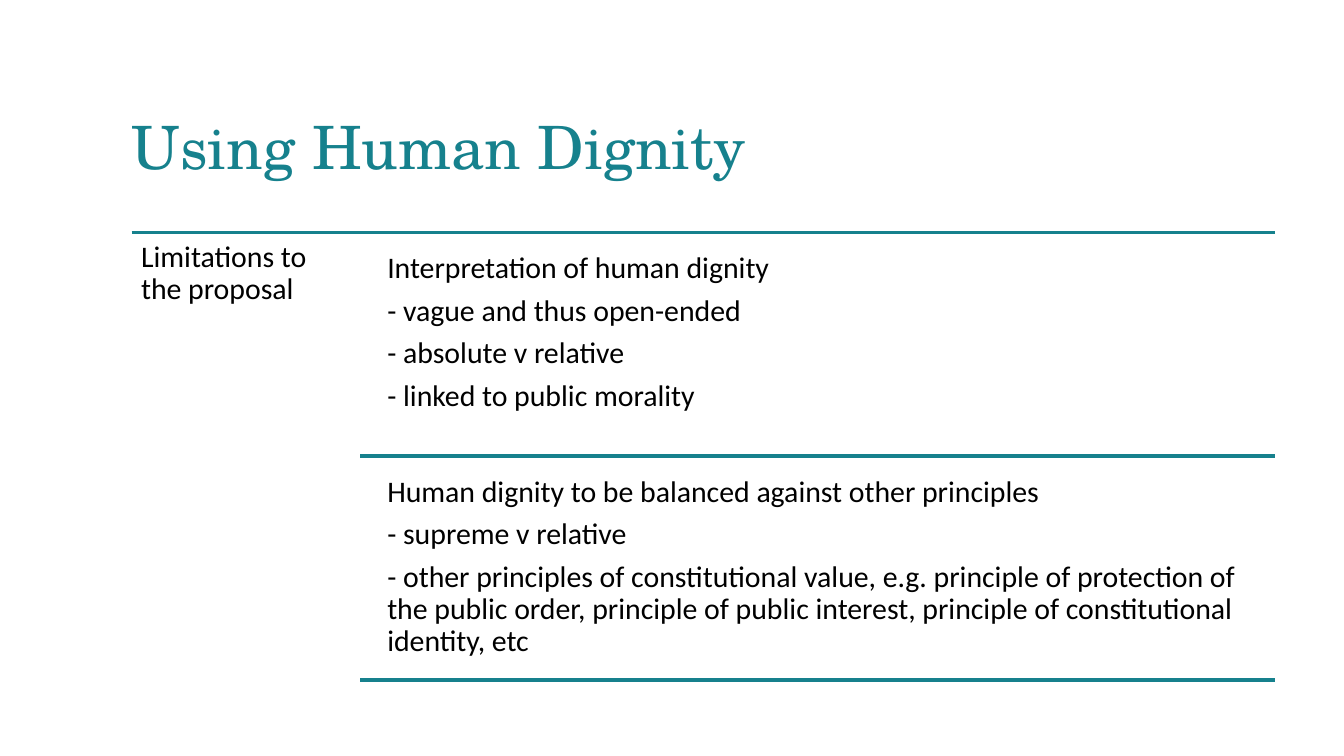
from lxml import etree
from pptx import Presentation
from pptx.dml.color import RGBColor
from pptx.enum.shapes import MSO_CONNECTOR
from pptx.enum.text import MSO_ANCHOR
from pptx.oxml.ns import qn
from pptx.util import Inches, Pt

LINE = MSO_CONNECTOR.STRAIGHT
TOP = MSO_ANCHOR.TOP
TEAL = RGBColor(0x16, 0x81, 0x8D)
BLACK = RGBColor(0, 0, 0)

# Grid: five columns, the first for the label; two rows
LEFT, RIGHT = 0.98, 9.49
HEAD, FOOT = 1.73, 5.06
COL, ROW = (RIGHT - LEFT) / 5, (FOOT - HEAD) / 2
SPLIT = LEFT + COL
PAD, GAP, INSET = 0.13, 0.08, 0.07

# Slide in 16:9
deck = Presentation()
deck.slide_width = Inches(10)
deck.slide_height = Inches(10 * 9 / 16)
slide = deck.slides.add_slide(deck.slide_layouts[6])


def add_text(box, inset, lines, font, size, color, pitch, after):
    shape = slide.shapes.add_textbox(*[Inches(n) for n in box])
    frame = shape.text_frame
    frame.word_wrap = True
    frame.vertical_anchor = TOP
    frame.margin_left = frame.margin_right = Inches(inset)
    frame.margin_top = frame.margin_bottom = Inches(inset)
    for i, line in enumerate(lines):
        para = frame.paragraphs[0] if i == 0 else frame.add_paragraph()
        para.line_spacing = pitch
        para.space_after = Pt(after)
        run = para.add_run()
        run.text = line
        run.font.name = font
        run.font.size = Pt(size)
        run.font.color.rgb = color


def add_rule(start, y):
    rule = slide.shapes.add_connector(
        LINE, Inches(start), Inches(y), Inches(RIGHT), Inches(y))
    rule.line.color.rgb = TEAL
    rule.line.width = Pt(2)
    etree.SubElement(rule._element.spPr, qn("a:effectLst"))


# Title
add_text((LEFT, 0.77, 8.13, 0.53), 0, ["Using Human Dignity"],
         "TeX Gyre Schola", 32, TEAL, Pt(42), 0)

# Label column
add_rule(LEFT, HEAD)
add_text((LEFT, HEAD, COL, 2 * ROW + GAP), INSET,
         ["Limitations to the proposal"], "Calibri", 16, BLACK, 0.9, 5.6)

# Points, each row closed by a rule
points = [
    ["Interpretation of human dignity",
     "- vague and thus open-ended",
     "- absolute v relative",
     "- linked to public morality"],
    ["Human dignity to be balanced against other principles",
     "- supreme v relative",
     "- other principles of constitutional value, e.g. principle of "
     "protection of the public order, principle of public interest, "
     "principle of constitutional identity, etc"],
]
for i, lines in enumerate(points):
    top = HEAD + i * ROW
    add_text((SPLIT + PAD, top + GAP, 4 * COL - PAD, ROW - GAP), INSET,
             lines, "Calibri", 16, BLACK, 0.9, 5.6)
    add_rule(SPLIT, top + ROW)

deck.save("out.pptx")
